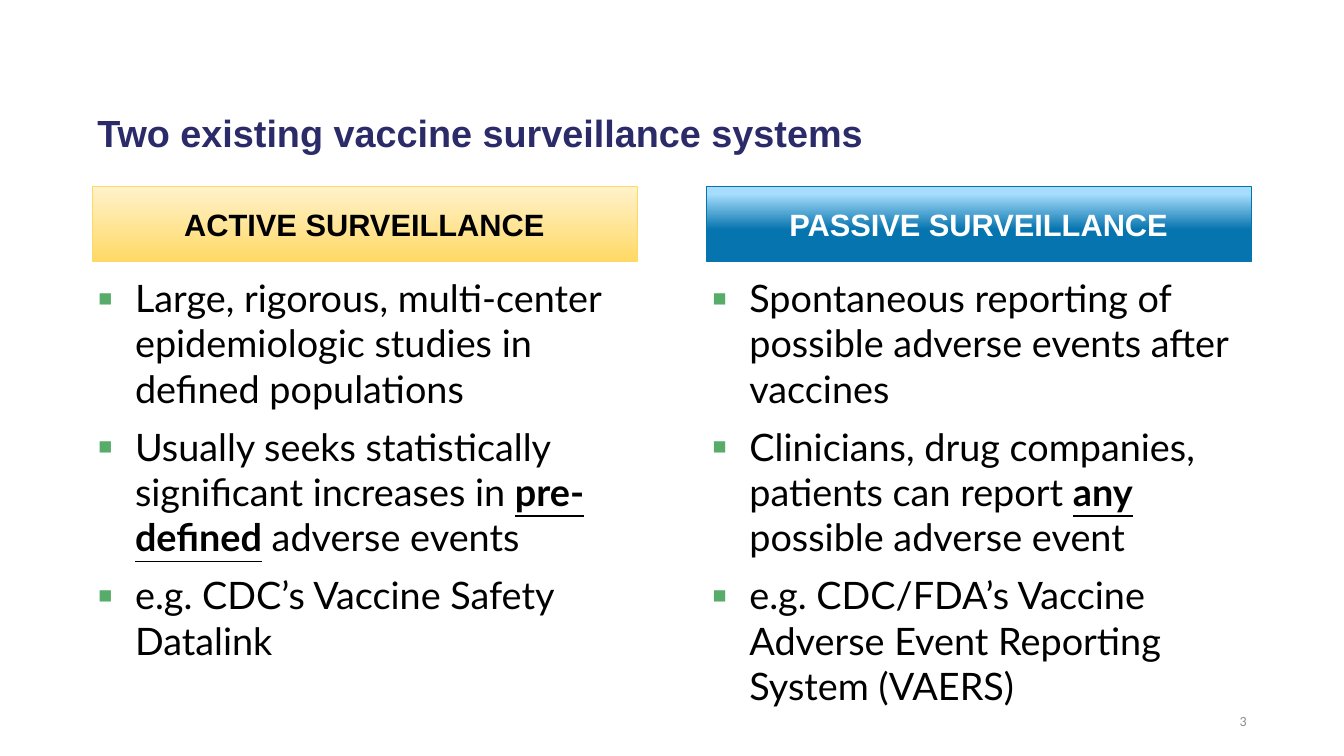
from lxml import etree
from pptx import Presentation
from pptx.dml.color import RGBColor
from pptx.enum.shapes import MSO_SHAPE
from pptx.enum.text import MSO_ANCHOR, MSO_AUTO_SIZE, PP_ALIGN
from pptx.oxml.ns import qn
from pptx.util import Inches, Pt

RECT = MSO_SHAPE.RECTANGLE
TOP, MIDDLE = MSO_ANCHOR.TOP, MSO_ANCHOR.MIDDLE
LEFT, CENTER, RIGHT = PP_ALIGN.LEFT, PP_ALIGN.CENTER, PP_ALIGN.RIGHT
NO_FIT = MSO_AUTO_SIZE.NONE

COLORS = {
    "navy": "2B2B69", "black": "000000", "white": "FFFFFF", "gray": "8C8C8C",
    "bullet": "56AC68", "cream": "FFF2CC", "gold": "FFD966",
    "sky": "A6DDFC", "blue": "0674AE",
}
FORMATS = {
    "title": {"size": Pt(54), "name": "Arial", "bold": True},
    "heading": {"size": Pt(44), "name": "Arial", "bold": True},
    "body": {"size": Pt(54), "name": "Lato", "bold": False},
    "strong": {"size": Pt(54), "name": "Lato", "bold": True, "underline": True},
    "number": {"size": Pt(20), "name": "Calibri", "bold": False},
}
COLUMNS = [
    {"x": 1.83, "height": 8.02, "heading": "ACTIVE SURVEILLANCE", "text": "black",
     "stops": [(0, "cream"), (1, "gold")],
     "items": [
         ["Large, rigorous, multi-center epidemiologic studies in defined populations"],
         ["Usually seeks statistically significant increases in ", "pre-defined", " adverse events"],
         ["e.g. CDC’s Vaccine Safety Datalink"]]},
    {"x": 14.02, "height": 9.03, "heading": "PASSIVE SURVEILLANCE", "text": "white",
     "stops": [(0.1, "sky"), (0.58, "blue")],
     "items": [
         ["Spontaneous reporting of possible adverse events after vaccines"],
         ["Clinicians, drug companies, patients can report ", "any", " possible adverse event"],
         ["e.g. CDC/FDA’s Vaccine Adverse Event Reporting System (VAERS)"]]},
]
COLUMN_W = 10.81


def place(sp, x, y, w, h, anchor):
    sp.left, sp.top, sp.width, sp.height = (Inches(v) for v in (x, y, w, h))
    tf = sp.text_frame
    tf.word_wrap, tf.auto_size, tf.vertical_anchor = True, NO_FIT, anchor
    return tf


def add_run(p, text, style, color):
    r = p.add_run()
    r.text = text
    for key, value in FORMATS[style].items():
        setattr(r.font, key, value)
    r.font.color.rgb = RGBColor.from_string(COLORS[color])


prs = Presentation()
prs.slide_width, prs.slide_height = Inches(26.67), Inches(15)
s = prs.slides.add_slide(prs.slide_layouts[3])
title, *bodies = s.placeholders

p = place(title, 1.83, 2.22, 23, 1.48, TOP).paragraphs[0]
p.alignment, p.line_spacing = LEFT, 0.9
add_run(p, "Two existing vaccine surveillance systems", "title", "navy")

for body, column in zip(bodies, COLUMNS):
    tf = place(body, column["x"], 5.4, COLUMN_W, column["height"], TOP)
    for i, parts in enumerate(column["items"]):
        p = tf.add_paragraph() if i else tf.paragraphs[0]
        p.line_spacing = 1.0
        p.space_before, p.space_after = Pt(10 if i else 0), Pt(8)
        pPr = p._p.get_or_add_pPr()
        pPr.set("marL", str(Inches(0.75)))
        pPr.set("indent", str(-Inches(0.75)))
        clr = etree.SubElement(pPr, qn("a:buClr"))
        etree.SubElement(clr, qn("a:srgbClr"), val=COLORS["bullet"])
        etree.SubElement(pPr, qn("a:buSzPct"), val="120000")
        etree.SubElement(pPr, qn("a:buFont"), typeface="Arial")
        etree.SubElement(pPr, qn("a:buChar"), char="▪")
        for j, text in enumerate(parts):
            add_run(p, text, "strong" if j == 1 else "body", "black")

    sp = s.shapes.add_shape(RECT, 0, 0, 0, 0)
    tf = place(sp, column["x"], 3.7, COLUMN_W, 1.48, MIDDLE)
    sp.shadow.inherit = False
    sp.fill.gradient()
    sp.fill.gradient_angle = 270
    for stop, (position, color) in zip(sp.fill.gradient_stops, column["stops"]):
        stop.position = position
        stop.color.rgb = RGBColor.from_string(COLORS[color])
    sp.line.color.rgb = RGBColor.from_string(COLORS[column["stops"][1][1]])
    sp.line.width = Pt(0.5)
    p = tf.paragraphs[0]
    p.alignment = CENTER
    add_run(p, column["heading"], "heading", column["text"])

number = s.shapes.add_textbox(0, 0, 0, 0)
p = place(number, 18.84, 13.9, 6, 0.8, MIDDLE).paragraphs[0]
p.alignment = RIGHT
add_run(p, "3", "number", "gray")

prs.save("out.pptx")
